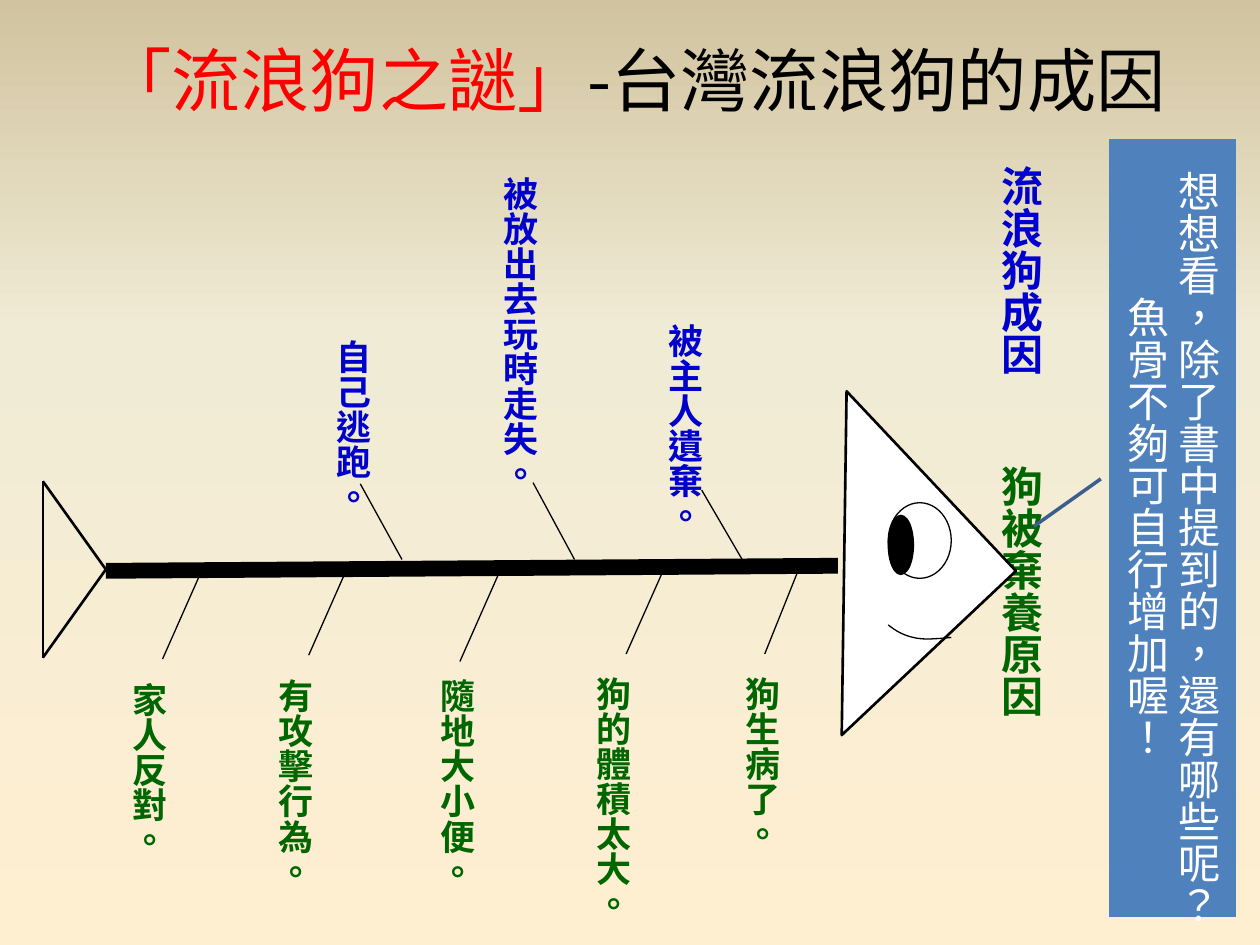
from copy import deepcopy

from lxml import etree
from pptx import Presentation
from pptx.dml.color import RGBColor
from pptx.enum.shapes import MSO_CONNECTOR, MSO_SHAPE
from pptx.enum.text import MSO_ANCHOR, MSO_AUTO_SIZE, PP_ALIGN
from pptx.oxml.ns import qn
from pptx.util import Pt

STRAIGHT = MSO_CONNECTOR.STRAIGHT
OVAL = MSO_SHAPE.OVAL
TRIANGLE = MSO_SHAPE.RIGHT_TRIANGLE
CALLOUT = MSO_SHAPE.LINE_CALLOUT_1_NO_BORDER
MIDDLE, TOP = MSO_ANCHOR.MIDDLE, MSO_ANCHOR.TOP
CENTER, LEFT = PP_ALIGN.CENTER, PP_ALIGN.LEFT
NO_AUTOFIT = MSO_AUTO_SIZE.NONE

FONT, LANGUAGE = "Noto Sans CJK SC", "zh-TW"
BLACK, WHITE, RED = "000000", "FFFFFF", "FF0000"
BLUE, GREEN = "0000CC", "006600"
BACKGROUND = [(0, "FFEFD1"), (0.65, "F0EBD5"), (1, "D1C39F")]

HEADINGS = [
    ("流浪狗成因", BLUE, (558, 87.3, 50.4, 140)),
    ("狗被棄養原因", GREEN, (558, 258.7, 50.4, 170)),
]
UPPER_CAUSES = [
    ("被主人遺棄。", (380.2, 177.8, 26.6, 116.6), (426.2, 323.3), (401, 280.1)),
    ("被放出去玩時走失。", (285.8, 93.6, 26.6, 186.5), (328.3, 319.7), (304.6, 275.8)),
    ("自己逃跑。", (190.8, 187.2, 26.6, 95.8), (229.7, 319.7), (205.9, 276.5)),
]
LOWER_CAUSES = [
    ("狗生病了。", (415.4, 379.4, 35.3, 123.1), (457.2, 323.3), (437, 373.7)),
    ("狗的體積太大。", (330.5, 379.4, 35.3, 142.6), (380.2, 323.3), (357.8, 373.7)),
    ("隨地大小便。", (241.2, 380.9, 35.3, 123.1), (285.1, 327.6), (262.8, 378)),
    ("有攻擊行為。", (149, 380.9, 35.3, 123.1), (198.7, 324), (176.4, 374.4)),
    ("家人反對。", (65.5, 383, 35.3, 123.1), (115.2, 326.2), (92.9, 376.6)),
]
SMILE = [
    [(543.6, 364.3), (535.7, 365), (527.8, 365.8), (522, 364.3)],
    [(522, 364.3), (515.5, 362.9), (511.2, 360), (507.6, 357.1)],
]


def color(value):
    return RGBColor.from_string(value)


def curve_points(controls, steps=10):
    for step in range(1, steps + 1):
        t = step / steps
        weights = ((1 - t) ** 3, 3 * t * (1 - t) ** 2, 3 * t * t * (1 - t), t**3)
        yield tuple(
            Pt(sum(w * point[axis] for w, point in zip(weights, controls)))
            for axis in (0, 1)
        )


class FishboneSlide:
    """Draws the elements of a fishbone diagram on one slide in a shared style."""

    def __init__(self, deck):
        self.page = deck.slides.add_slide(deck.slide_layouts[5])

    def background(self, stops):
        fill = self.page.background.fill
        fill.gradient()
        fill.gradient_angle = 90
        stop_list = self.page.element.find(".//" + qn("a:gsLst"))
        stop_list.append(deepcopy(stop_list[-1]))
        for stop, (position, value) in zip(fill.gradient_stops, stops):
            stop.position = position
            stop.color.rgb = color(value)

    def style_span(self, span, size, value, bold=False):
        span.font.size = Pt(size)
        span.font.bold = bold
        span.font.color.rgb = color(value)
        span.font.name = FONT
        properties = span.font._element
        properties.set("lang", LANGUAGE)
        etree.SubElement(properties, qn("a:ea")).set("typeface", FONT)

    def title(self, parts, box):
        title = self.page.shapes.title
        title.left, title.top, title.width, title.height = map(Pt, box)
        frame = title.text_frame
        frame.auto_size = NO_AUTOFIT
        frame.vertical_anchor = MIDDLE
        para = frame.paragraphs[0]
        para.alignment = CENTER
        for text, value in parts:
            span = para.add_run()
            span.text = text
            self.style_span(span, 39.6, value)

    def vertical_text(self, shape, text, size, value, bold, anchor, alignment):
        frame = shape.text_frame
        frame.text = text
        frame.word_wrap = True
        frame.vertical_anchor = anchor
        frame.margin_left = frame.margin_right = Pt(3.6)
        frame.margin_top = frame.margin_bottom = Pt(3.6)
        frame._txBody.bodyPr.set("vert", "eaVert")
        for para in frame.paragraphs:
            para.alignment = alignment
            for span in para.runs:
                self.style_span(span, size, value, bold)

    def label(self, text, box, size, value, anchor=TOP, alignment=LEFT):
        shape = self.page.shapes.add_textbox(*map(Pt, box))
        self.vertical_text(shape, text, size, value, True, anchor, alignment)

    def line(self, start, end, width=0.75):
        line = self.page.shapes.add_connector(STRAIGHT, *map(Pt, start + end))
        line.line.color.rgb = color(BLACK)
        line.line.width = Pt(width)
        etree.SubElement(line._element.spPr, qn("a:effectLst"))

    def shape(self, kind, box, fill, outline=BLACK, width=0.75):
        shape = self.page.shapes.add_shape(kind, *map(Pt, box))
        shape.shadow.inherit = False
        shape.fill.solid()
        shape.fill.fore_color.rgb = color(fill)
        shape.line.color.rgb = color(outline)
        shape.line.width = Pt(width)
        return shape

    def curve(self, segments):
        start = segments[0][0]
        builder = self.page.shapes.build_freeform(*map(Pt, start))
        for controls in segments:
            builder.add_line_segments(curve_points(controls), close=False)
        shape = builder.convert_to_shape()
        shape.shadow.inherit = False
        shape.fill.background()
        shape.line.color.rgb = color(BLACK)
        shape.line.width = Pt(0.75)

    def fish(self):
        joint, upper_fin, lower_fin = (60.5, 325.4), (24.5, 275), (24.5, 375.8)
        self.line((478.8, 323.3), (60.5, 326.2), 9)
        for start, end in [(joint, lower_fin), (joint, upper_fin), (upper_fin, lower_fin)]:
            self.line(start, end, 1.5)
        head = self.shape(TRIANGLE, (414, 251.3, 136.8, 141.1), WHITE, width=1.5)
        head.rotation = 316.7
        head._element.spPr.find(qn("a:xfrm")).set("flipH", "1")
        self.shape(OVAL, (507.6, 287.3, 36, 43.2), WHITE)
        self.shape(OVAL, (507.6, 294.5, 14.4, 33.8), BLACK)
        self.curve(SMILE)

    def causes(self, causes, value):
        for text, box, start, end in causes:
            self.label(text, box, 20, value)
            self.line(start, end)

    def callout(self, text, box):
        shape = self.shape(CALLOUT, box, "4F81BD", "3A5F8C", 2)
        for index, adjustment in enumerate((0.437, -0.063, 0.498, -0.59)):
            shape.adjustments[index] = adjustment
        self.vertical_text(shape, text, 24, WHITE, False, MIDDLE, CENTER)


def main():
    deck = Presentation()
    deck.slide_width, deck.slide_height = Pt(720), Pt(540)
    slide = FishboneSlide(deck)
    slide.background(BACKGROUND)
    slide.title([("「流浪狗之謎」", RED), ("-台灣流浪狗的成因", BLACK)], (38.2, 0, 648, 90))
    for text, value, box in HEADINGS:
        slide.label(text, box, 24, value, MIDDLE, CENTER)
    slide.fish()
    slide.causes(UPPER_CAUSES, BLUE)
    slide.causes(LOWER_CAUSES, GREEN)
    slide.callout(
        "想想看，除了書中提到的，還有哪些呢？\n魚骨不夠可自行增加喔！",
        (633.6, 79.2, 72.7, 445),
    )
    deck.save("out.pptx")


if __name__ == "__main__":
    main()
